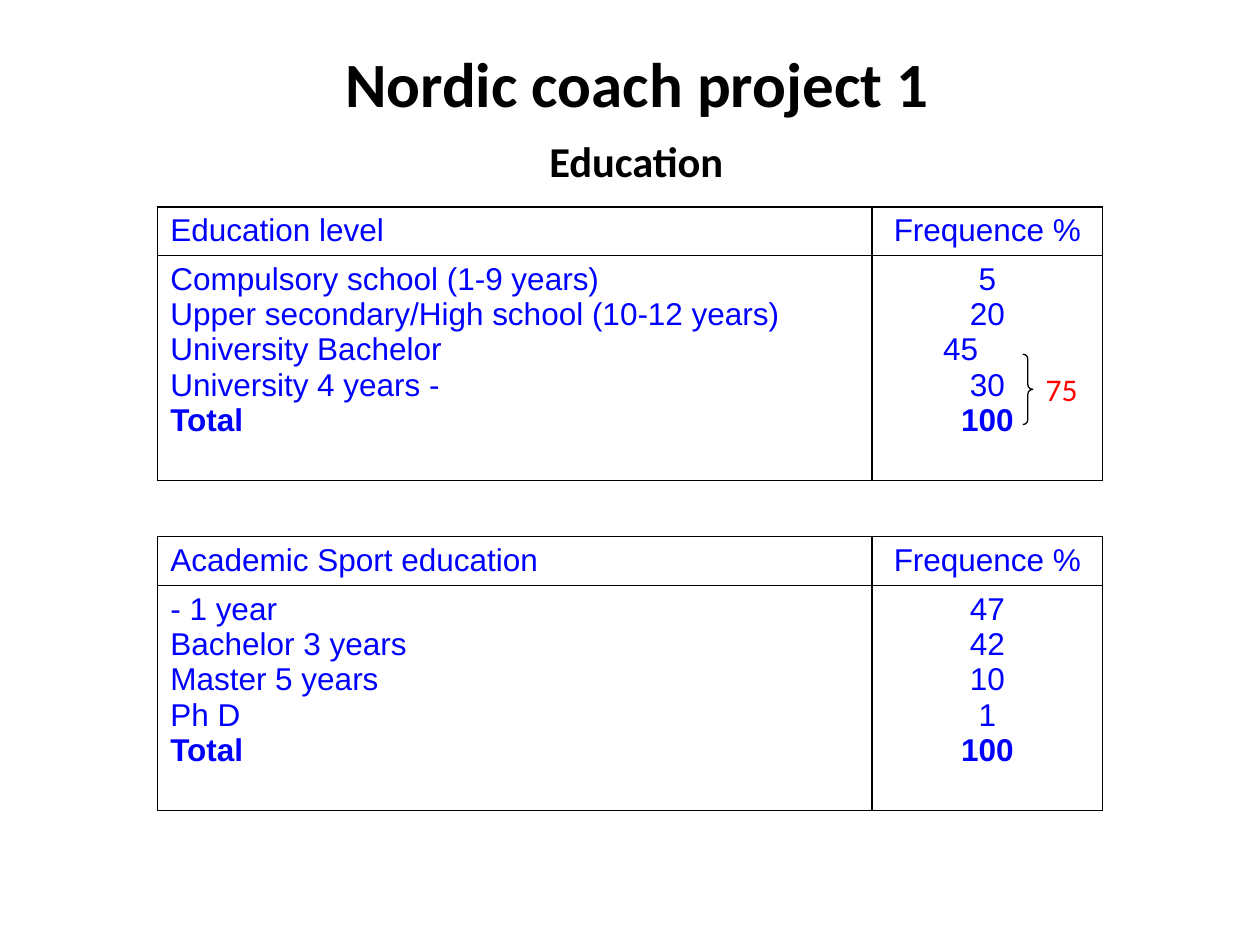
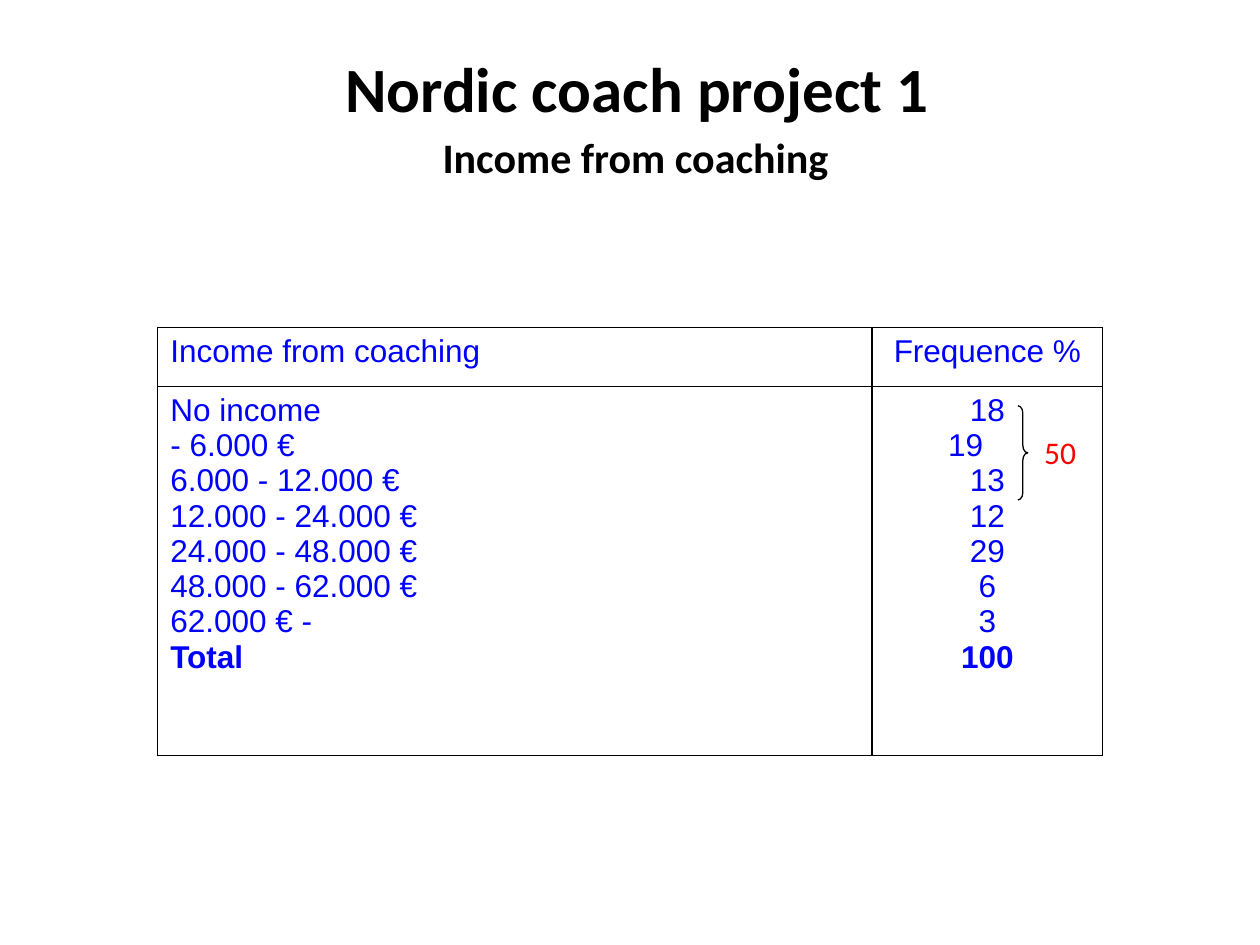
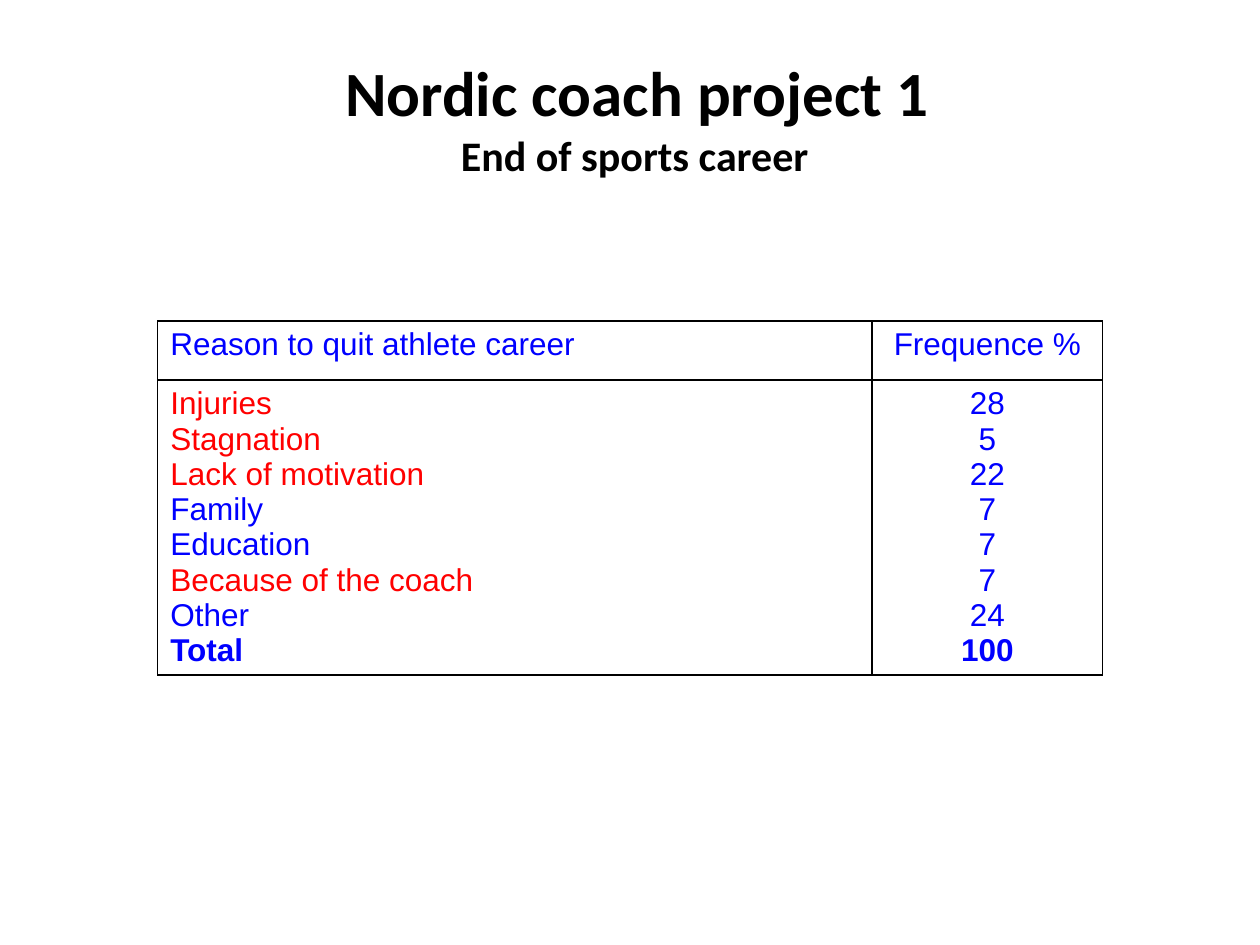
from lxml import etree
from pptx import Presentation
from pptx.dml.color import RGBColor
from pptx.enum import shapes, text
from pptx.oxml import ns
from pptx.util import Cm, Pt

BLACK, BLUE, RED = "000000", "0000FF", "FF0000"
TABLE_LEFT = 3.18
COLUMN_WIDTHS = (14.4, 4.65)

SLIDES = [
    {
        "subtitle": "Education", "subtitle_size": 24.3, "spacer_size": 32.4,
        "tables": [
            {"top": 4.17, "heights": (0.98, 4.54), "heading": "Education level",
             "rows": [("Compulsory school (1-9 years)", 5),
                      ("Upper secondary/High school (10-12 years)", 20),
                      ("University Bachelor", 45),
                      ("University 4 years -", 30),
                      ("Total", 100)],
             "red": (), "indents": {"45": 1.18}},
            {"top": 10.82, "heights": (0.98, 4.54), "heading": "Academic Sport education",
             "rows": [("- 1 year", 47), ("Bachelor 3 years", 42), ("Master 5 years", 10),
                      ("Ph D", 1), ("Total", 100)],
             "red": (), "indents": {}},
        ],
        "brace": (20.62, 7.14, 0.2, 1.42), "bend": 0.5,
        "sum": "75", "sum_position": (20.83, 7.34),
    },
    {
        "subtitle": "Income from coaching", "subtitle_size": 24, "spacer_size": 28,
        "tables": [
            {"top": 6.6, "heights": (1.19, 7.44), "heading": "Income from coaching",
             "rows": [("No income", 18), ("- 6.000 €", 19), ("6.000 - 12.000 €", 13),
                      ("12.000 - 24.000 €", 12), ("24.000 - 48.000 €", 29),
                      ("48.000 - 62.000 €", 6), ("62.000 € -", 3), ("Total", 100)],
             "red": (), "indents": {"19": 1.28}},
        ],
        "brace": (20.52, 8.18, 0.2, 1.9), "bend": 0.75,
        "sum": "50", "sum_position": (20.8, 8.61),
    },
    {
        "subtitle": "End of sports career", "subtitle_size": 24, "spacer_size": 24,
        "tables": [
            {"top": 6.47, "heights": (1.19, 5.94), "heading": "Reason to quit athlete career",
             "rows": [("Injuries", 28), ("Stagnation", 5), ("Lack of motivation", 22),
                      ("Family", 7), ("Education", 7), ("Because of the coach", 7),
                      ("Other", 24), ("Total", 100)],
             "red": ("Injuries", "Stagnation", "Lack of motivation", "Because of the coach"),
             "indents": {}},
        ],
    },
]


def style(run, size, color, font="Calibri", bold=False):
    run.font.size = Pt(size)
    run.font.name = font
    run.font.bold = bold
    run.font.color.rgb = RGBColor.from_string(color)


def add_borders(cell):
    properties = cell._tc.get_or_add_tcPr()
    for position, side in enumerate(("lnL", "lnR", "lnT", "lnB")):
        line = etree.Element(ns.qn(f"a:{side}"), w=str(Pt(1)))
        fill = etree.SubElement(line, ns.qn("a:solidFill"))
        etree.SubElement(fill, ns.qn("a:srgbClr"), val=BLACK)
        properties.insert(position, line)


presentation = Presentation()
presentation.slide_width, presentation.slide_height = Cm(25.4), Cm(19.05)
title_defaults = presentation.slide_master.element.find(
    f".//{ns.qn('p:titleStyle')}/{ns.qn('a:lvl1pPr')}/{ns.qn('a:defRPr')}")
title_defaults.set("sz", "3600")

for content in SLIDES:
    slide = presentation.slides.add_slide(presentation.slide_layouts[5])

    title = slide.shapes.title
    title.left, title.top, title.width, title.height = Cm(1.27), Cm(0.76), Cm(22.86), Cm(3.18)
    title.text_frame.auto_size = text.MSO_AUTO_SIZE.NONE
    title.text_frame.vertical_anchor = text.MSO_ANCHOR.MIDDLE
    paragraph = title.text_frame.paragraphs[0]
    paragraph.text = " Nordic coach project 1\v "
    paragraph.alignment = text.PP_ALIGN.CENTER
    paragraph.add_run().text = content["subtitle"]
    sizes = (36, content["spacer_size"], content["subtitle_size"])
    for run, size in zip(paragraph.runs, sizes):
        style(run, size, BLACK, bold=True)

    for data in content["tables"]:
        frame = slide.shapes.add_table(
            2, 2, Cm(TABLE_LEFT), Cm(data["top"]),
            Cm(sum(COLUMN_WIDTHS)), Cm(sum(data["heights"])))
        table = frame.table
        table.first_row = table.horz_banding = False
        for column, width in zip(table.columns, COLUMN_WIDTHS):
            column.width = Cm(width)
        for row, height in zip(table.rows, data["heights"]):
            row.height = Cm(height)
        table.cell(0, 0).text = data["heading"]
        table.cell(0, 1).text = "Frequence %"
        for column in range(2):
            table.cell(1, column).text = "\n".join(str(row[column]) for row in data["rows"])

        for index, cell in enumerate(table.iter_cells()):
            cell.fill.background()
            add_borders(cell)
            for paragraph in cell.text_frame.paragraphs:
                wording = paragraph.text
                if wording in data["indents"]:
                    paragraph.alignment = text.PP_ALIGN.LEFT
                    paragraph._p.get_or_add_pPr().set("marL", str(Cm(data["indents"][wording])))
                elif index % 2:
                    paragraph.alignment = text.PP_ALIGN.CENTER
                color = RED if wording in data["red"] else BLUE
                style(paragraph.runs[0], 18, color, "Arial", wording in ("Total", "100"))

    if "brace" in content:
        brace = slide.shapes.add_shape(
            shapes.MSO_SHAPE.RIGHT_BRACE, *[Cm(length) for length in content["brace"]])
        brace.adjustments[0] = content["bend"]
        brace.shadow.inherit = False
        brace.fill.background()
        brace.line.color.rgb = RGBColor.from_string(BLACK)
        brace.line.width = Pt(0.75)

        left, top = content["sum_position"]
        label = slide.shapes.add_textbox(Cm(left), Cm(top), Cm(1.22), Cm(1.02))
        label.text_frame.word_wrap = False
        label.text_frame.auto_size = text.MSO_AUTO_SIZE.SHAPE_TO_FIT_TEXT
        label.text_frame.text = content["sum"]
        style(label.text_frame.paragraphs[0].runs[0], 18, RED)

presentation.save("out.pptx")
